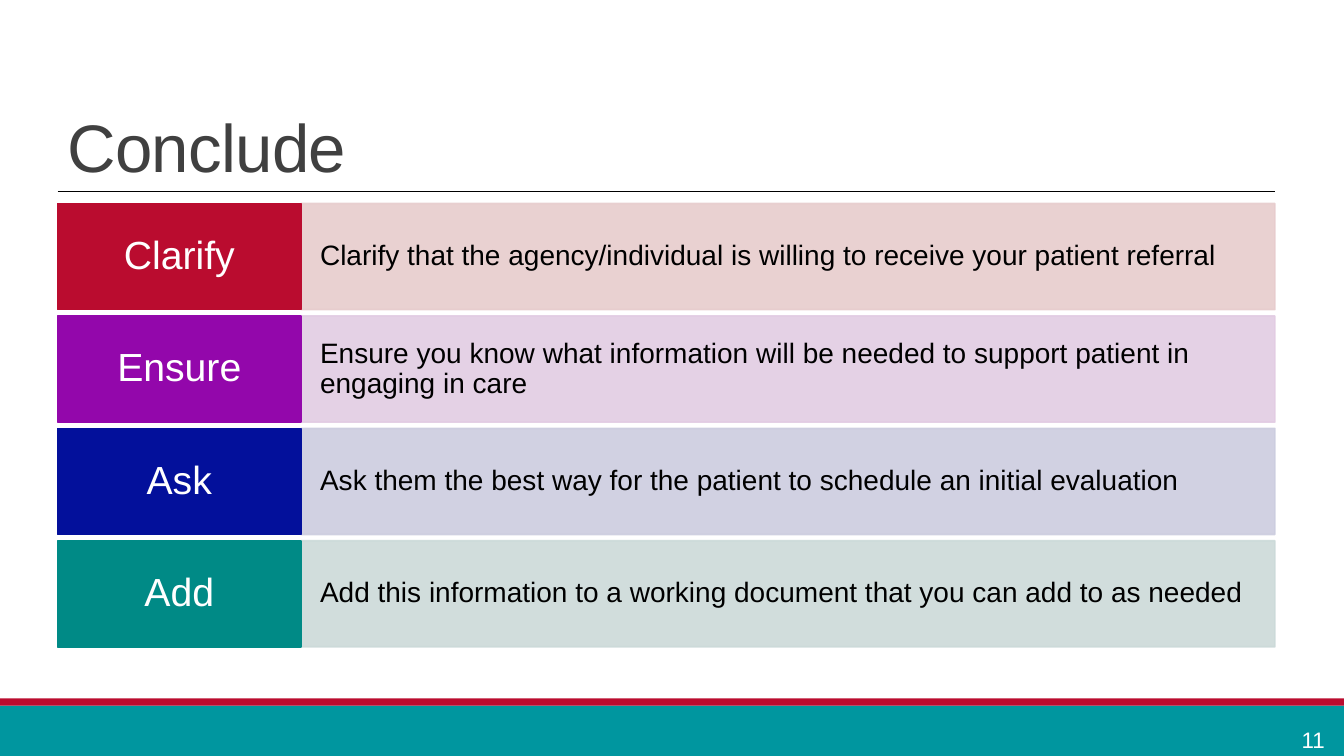
from lxml.etree import SubElement
from pptx import Presentation
from pptx.dml.color import RGBColor
from pptx.enum.shapes import MSO_CONNECTOR, MSO_SHAPE
from pptx.enum.text import MSO_ANCHOR as Anchor, PP_ALIGN as Align
from pptx.oxml.ns import qn
from pptx.util import Cm, Pt

WHITE = RGBColor(0xFF, 0xFF, 0xFF)
BLACK = RGBColor(0x00, 0x00, 0x00)
CHARCOAL = RGBColor(0x40, 0x40, 0x40)
RED = RGBColor(0xBA, 0x0C, 0x2F)
PURPLE = RGBColor(0x93, 0x07, 0xAB)
BLUE = RGBColor(0x03, 0x10, 0x9B)
GREEN = RGBColor(0x00, 0x8A, 0x86)
TEAL = RGBColor(0x00, 0x96, 0x9F)
PALE_RED = RGBColor(0xE7, 0xCC, 0xCD)
PALE_PURPLE = RGBColor(0xE2, 0xCC, 0xE3)
PALE_BLUE = RGBColor(0xCC, 0xCD, 0xDF)
PALE_GREEN = RGBColor(0xCC, 0xDA, 0xD9)

SLIDE_WIDTH, SLIDE_HEIGHT = 33.87, 19.05
MARGIN, CONTENT_WIDTH = 1.45, 30.68
STEPS = [
    ("Clarify", RED, PALE_RED,
     "Clarify that the agency/individual is willing to receive your patient referral"),
    ("Ensure", PURPLE, PALE_PURPLE,
     "Ensure you know what information will be needed to support patient in engaging in care"),
    ("Ask", BLUE, PALE_BLUE,
     "Ask them the best way for the patient to schedule an initial evaluation"),
    ("Add", GREEN, PALE_GREEN,
     "Add this information to a working document that you can add to as needed"),
]


def write(holder, text, size, color, align=Align.LEFT, anchor=Anchor.MIDDLE,
          line_spacing=1.0, inset=(0.25, 0.13), tracking=None):
    """Fill a shape or text box with one formatted paragraph."""
    frame = holder.text_frame
    frame.word_wrap = True
    frame.vertical_anchor = anchor
    frame.margin_left = frame.margin_right = Cm(inset[0])
    frame.margin_top = frame.margin_bottom = Cm(inset[1])
    paragraph = frame.paragraphs[0]
    paragraph.alignment = align
    paragraph.line_spacing = line_spacing
    run = paragraph.add_run()
    run.text = text
    run.font.name = "Arial"
    run.font.size = Pt(size)
    run.font.color.rgb = color
    if tracking is not None:
        run.font._element.set("spc", str(round(tracking * 100)))


def add_block(slide, left, top, width, height, color, outlined=False, opacity=None):
    """Add a flat rectangle, optionally outlined and translucent."""
    block = slide.shapes.add_shape(
        MSO_SHAPE.RECTANGLE, Cm(left), Cm(top), Cm(width), Cm(height))
    block.shadow.inherit = False
    block.fill.solid()
    block.fill.fore_color.rgb = color
    if outlined:
        block.line.color.rgb = color
        block.line.width = Pt(1.25)
    else:
        block.line.fill.background()
    if opacity is not None:
        for tint in block._element.spPr.iter(qn("a:srgbClr")):
            SubElement(tint, qn("a:alpha"), val=str(opacity * 1000))
    return block


def add_footer(slide, left, top, width, height, number):
    """Draw the footer bands and the slide number."""
    stripe_height = 0.18
    add_block(slide, left, top + stripe_height, width, height - stripe_height, TEAL)
    add_block(slide, left, top, width, stripe_height, RED)
    number_width = 1.55
    page_number = slide.shapes.add_textbox(
        Cm(left + width - number_width), Cm(top + 0.54), Cm(number_width), Cm(1.01))
    write(page_number, number, 16, WHITE, align=Align.CENTER)


def add_heading(slide, left, top, width, height, text):
    """Set the title on a thin rule."""
    bottom = Cm(top + height)
    rule = slide.shapes.add_connector(
        MSO_CONNECTOR.STRAIGHT, Cm(left), bottom, Cm(left + width), bottom)
    rule.line.color.rgb = BLACK
    rule.line.width = Pt(1)
    SubElement(rule._element.spPr, qn("a:effectLst"))
    title = slide.shapes.add_textbox(Cm(left), Cm(top), Cm(width), Cm(height))
    write(title, text, 48, CHARCOAL, anchor=Anchor.BOTTOM, line_spacing=0.85, tracking=-0.5)


def add_steps(slide, left, top, width, height, steps):
    """Stack the steps as rows of a strong label and a pale detail."""
    gap = 0.16
    row_height = (height - gap * (len(steps) - 1)) / len(steps)
    label_width = width / 5
    for index, (name, strong, pale, advice) in enumerate(steps):
        row_top = top + index * (row_height + gap)
        detail = add_block(slide, left + label_width, row_top, width - label_width,
                           row_height, pale, outlined=True, opacity=90)
        write(detail, advice, 20, BLACK, line_spacing=0.9, inset=(0.48, 0.25))
        label = add_block(slide, left, row_top, label_width, row_height, strong, outlined=True)
        write(label, name, 28, WHITE, align=Align.CENTER, line_spacing=0.9, inset=(0.33, 0.25))


def main():
    """Build and save the slide."""
    deck = Presentation()
    deck.slide_width, deck.slide_height = Cm(SLIDE_WIDTH), Cm(SLIDE_HEIGHT)
    slide = deck.slides.add_slide(deck.slide_layouts[6])
    footer_top = 17.6
    add_footer(slide, 0, footer_top, SLIDE_WIDTH, SLIDE_HEIGHT - footer_top, "11")
    add_heading(slide, MARGIN, 0.79, CONTENT_WIDTH, 4.03, "Conclude")
    add_steps(slide, MARGIN, 5.13, CONTENT_WIDTH, 11.17, STEPS)
    deck.save("out.pptx")


if __name__ == "__main__":
    main()
